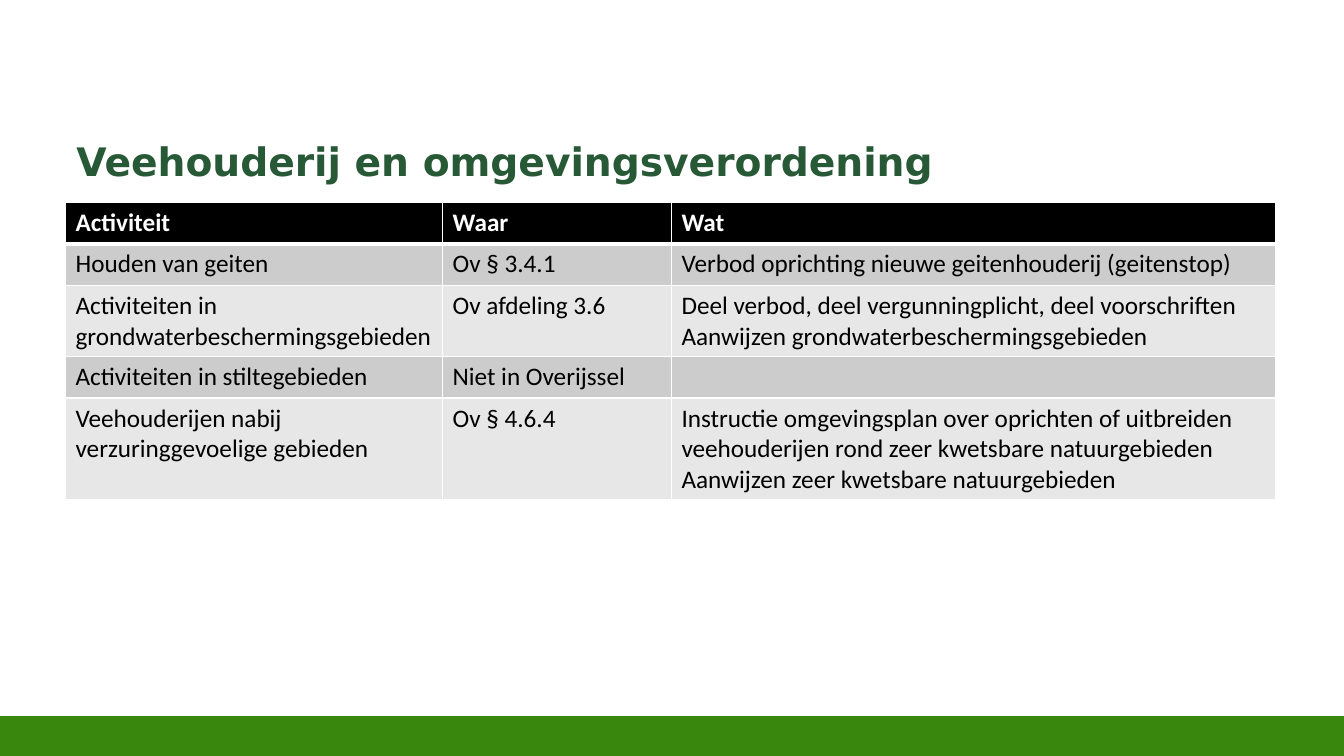
from dataclasses import dataclass

from lxml import etree
from pptx import Presentation
from pptx.dml.color import RGBColor
from pptx.enum.shapes import MSO_SHAPE
from pptx.enum.text import MSO_ANCHOR
from pptx.oxml.ns import qn
from pptx.util import Inches, Pt

RECTANGLE = MSO_SHAPE.RECTANGLE
TOP = MSO_ANCHOR.TOP


@dataclass(frozen=True)
class Theme:
    title_font: str = "DejaVu Sans"
    body_font: str = "Calibri"
    title_size: int = 28
    body_size: int = 18
    title: str = "275937"
    footer: str = "39870C"
    white: str = "FFFFFF"
    black: str = "000000"
    bands: tuple = ("CCCCCC", "E7E7E7")
    rule: int = 1
    header_rule: int = 3


THEME = Theme()
COLUMN_WIDTHS = (3.74, 2.27, 5.99)
ROW_HEIGHTS = (0.41, 0.41, 0.71, 0.41, 1.01)
ROWS = (
    ("Activiteit", "Waar", "Wat"),
    ("Houden van geiten", "Ov § 3.4.1",
     "Verbod oprichting nieuwe geitenhouderij (geitenstop)"),
    ("Activiteiten in grondwaterbeschermingsgebieden", "Ov afdeling 3.6",
     "Deel verbod, deel vergunningplicht, deel voorschriften\n"
     "Aanwijzen grondwaterbeschermingsgebieden"),
    ("Activiteiten in stiltegebieden", "Niet in Overijssel", ""),
    ("Veehouderijen nabij verzuringgevoelige gebieden", "Ov § 4.6.4",
     "Instructie omgevingsplan over oprichten of uitbreiden "
     "veehouderijen rond zeer kwetsbare natuurgebieden\n"
     "Aanwijzen zeer kwetsbare natuurgebieden"),
)


def write_text(tf, text, color, **formats):
    tf.text = text
    for p in tf.paragraphs:
        for name, value in formats.items():
            setattr(p.font, name, value)
        p.font.color.rgb = RGBColor.from_string(color)


def add_footer(s):
    sp = s.shapes.add_shape(RECTANGLE, 0, Inches(7.12), Inches(13.33), Inches(0.38))
    sp.shadow.inherit = False
    sp.fill.solid()
    sp.fill.fore_color.rgb = RGBColor.from_string(THEME.footer)
    sp.line.color.rgb = RGBColor.from_string(THEME.footer)
    sp.line.width = Pt(2)


def add_title(s, text):
    sp = s.shapes.add_textbox(Inches(0.66), Inches(1.28), Inches(12), Inches(0.73))
    tf = sp.text_frame
    layout = {"word_wrap": True, "vertical_anchor": TOP, "margin_top": Inches(0.08)}
    for name, value in layout.items():
        setattr(tf, name, value)
    write_text(tf, text, THEME.title, name=THEME.title_font,
               size=Pt(THEME.title_size), bold=True)


def set_borders(cell, widths):
    tc_pr = cell._tc.get_or_add_tcPr()
    for i, (side, width) in enumerate(widths.items()):
        ln = etree.Element(qn(f"a:ln{side}"), w=str(Pt(width)))
        fill = etree.SubElement(ln, qn("a:solidFill"))
        etree.SubElement(fill, qn("a:srgbClr"), val=THEME.white)
        tc_pr.insert(i, ln)


def format_cell(cell, text, row):
    header = row == 0
    fill = THEME.black if header else THEME.bands[(row - 1) % 2]
    color = THEME.white if header else THEME.black
    cell.fill.solid()
    cell.fill.fore_color.rgb = RGBColor.from_string(fill)
    write_text(cell.text_frame, text, color, name=THEME.body_font,
               size=Pt(THEME.body_size), bold=header)
    widths = dict.fromkeys("LRTB", THEME.rule)
    if header:
        widths["B"] = THEME.header_rule
    elif row == 1:
        widths["T"] = THEME.header_rule
    set_borders(cell, widths)


def add_activity_table(s):
    frame = s.shapes.add_table(len(ROWS), len(COLUMN_WIDTHS), Inches(0.65), Inches(2.01),
                               Inches(sum(COLUMN_WIDTHS)), Inches(sum(ROW_HEIGHTS)))
    table = frame.table
    for column, width in zip(table.columns, COLUMN_WIDTHS):
        column.width = Inches(width)
    for i, (height, texts) in enumerate(zip(ROW_HEIGHTS, ROWS)):
        table.rows[i].height = Inches(height)
        for j, text in enumerate(texts):
            format_cell(table.cell(i, j), text, i)


def main():
    prs = Presentation()
    prs.slide_width = Inches(13.33)
    prs.slide_height = Inches(7.5)
    s = prs.slides.add_slide(prs.slide_layouts[6])
    add_footer(s)
    add_title(s, "Veehouderij en omgevingsverordening")
    add_activity_table(s)
    prs.save("out.pptx")


if __name__ == "__main__":
    main()
